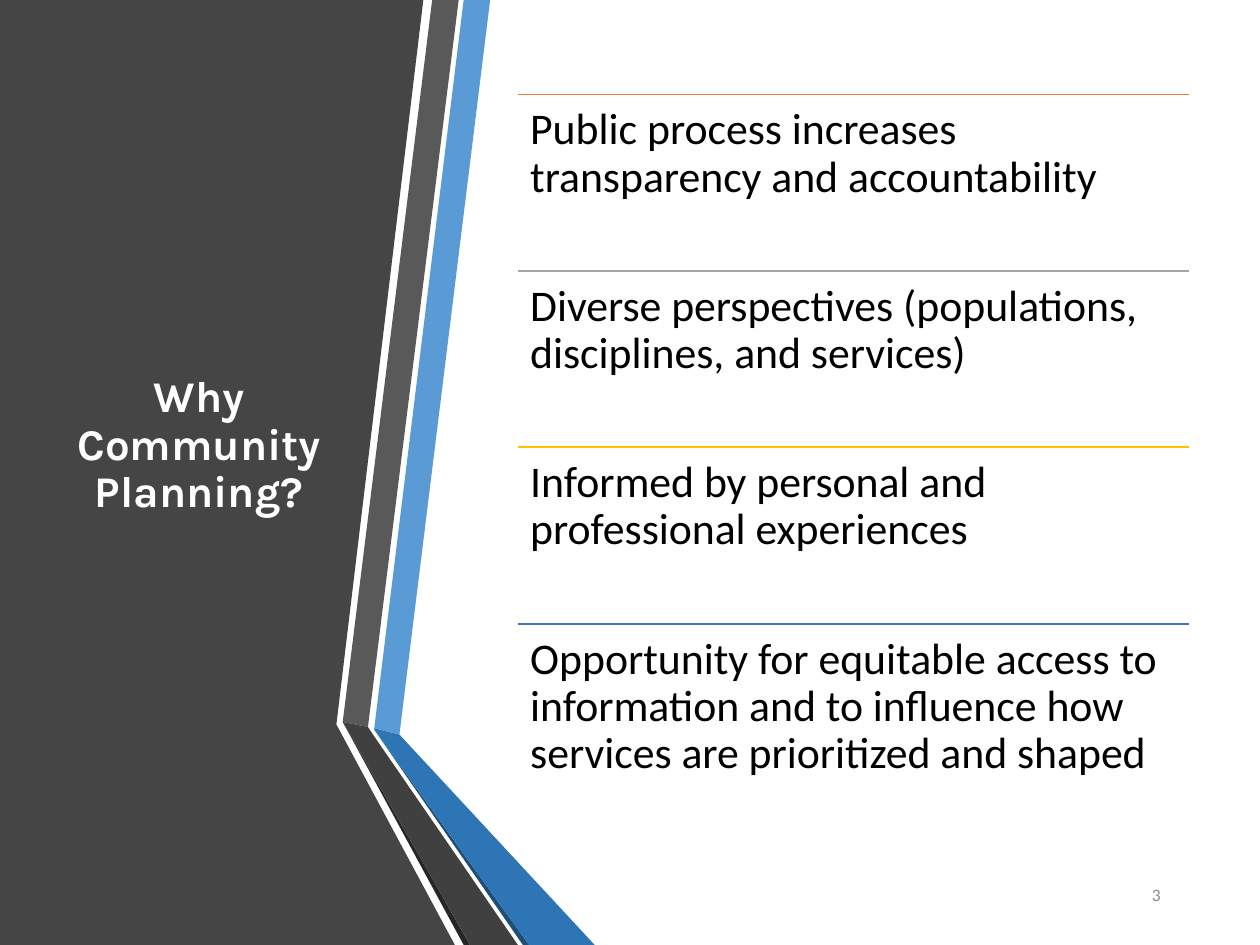
from lxml.etree import SubElement
from pptx import Presentation
from pptx.dml.color import RGBColor
from pptx.enum.shapes import MSO_CONNECTOR
from pptx.enum.text import MSO_ANCHOR, MSO_AUTO_SIZE, PP_ALIGN
from pptx.oxml.ns import qn
from pptx.util import Inches, Pt

COLORS = {
    "panel": "454545", "blue": "5B9BD5", "gray": "595959",
    "gray_edge": "262626", "blue_edge": "1F4E79",
    "blue_fold": "2E75B6", "gray_fold": "404040",
    "title": "FFFFFF", "body": "000000", "number": "8C8C8C",
    "orange": "ED7D31", "silver": "A5A5A5", "gold": "FFC000", "royal": "4472C4",
}
TITLE = "Why Community Planning?"
SLIDE_NUMBER = "3"
REASONS = [
    ("orange", "Public process increases transparency and accountability"),
    ("silver", "Diverse perspectives (populations, disciplines, and services)"),
    ("gold", "Informed by personal and professional experiences"),
    ("royal", "Opportunity for equitable access to information and to influence "
              "how services are prioritized and shaped"),
]
RIBBONS = [
    ("panel", [(0, 0), (3.36, 0), (2.67, 5.75), (3.61, 7.5), (0, 7.5)]),
    ("blue", [(2.97, 5.78), (3.17, 5.83), (3.89, 0), (3.68, 0)]),
    ("gray", [(3.64, 0), (3.43, 0), (2.72, 5.73), (2.92, 5.77)]),
    ("gray_edge", [(2.72, 5.73), (3.68, 7.5), (3.73, 7.5)]),
    ("blue_edge", [(2.97, 5.79), (4.15, 7.5), (4.2, 7.5)]),
    ("blue_fold", [(2.97, 5.79), (4.2, 7.5), (4.72, 7.5), (3.17, 5.83), (2.97, 5.78)]),
    ("gray_fold", [(4.11, 7.5), (2.96, 5.83), (2.92, 5.77), (2.72, 5.73), (3.73, 7.5)]),
]
LIST_LEFT, LIST_TOP, LIST_WIDTH, ROW_HEIGHT = 4.11, 0.75, 5.33, 1.4


def rgb(name):
    return RGBColor.from_string(COLORS[name])


def add_ribbon(slide, color, points):
    corners = [(Inches(x), Inches(y)) for x, y in points]
    builder = slide.shapes.build_freeform(*corners[0])
    builder.add_line_segments(corners[1:], close=True)
    ribbon = builder.convert_to_shape()
    ribbon.shadow.inherit = False
    ribbon.fill.solid()
    ribbon.fill.fore_color.rgb = rgb(color)
    ribbon.line.fill.background()


def add_rule(slide, color, top):
    rule = slide.shapes.add_connector(
        MSO_CONNECTOR.STRAIGHT, Inches(LIST_LEFT), Inches(top),
        Inches(LIST_LEFT + LIST_WIDTH), Inches(top))
    rule.line.color.rgb = rgb(color)
    rule.line.width = Pt(1)
    SubElement(rule._element.spPr, qn("a:effectLst"))


def write(shape, text, size, font, color, align, anchor, bold=False, spacing=None):
    frame = shape.text_frame
    frame.text = text
    frame.word_wrap = True
    frame.auto_size = MSO_AUTO_SIZE.NONE
    frame.vertical_anchor = anchor
    paragraph = frame.paragraphs[0]
    paragraph.alignment = align
    paragraph.line_spacing = spacing
    run_font = paragraph.runs[0].font
    run_font.size = Pt(size)
    run_font.name = font
    run_font.bold = bold
    run_font.color.rgb = rgb(color)
    return frame


def add_reason(slide, text, top):
    reason = slide.shapes.add_textbox(
        Inches(LIST_LEFT), Inches(top), Inches(LIST_WIDTH), Inches(ROW_HEIGHT))
    frame = write(reason, text, 25, "Calibri", "body",
                  PP_ALIGN.LEFT, MSO_ANCHOR.TOP, spacing=0.9)
    frame.margin_left = frame.margin_right = Inches(0.1)
    frame.margin_top = frame.margin_bottom = Inches(0.1)


def main():
    deck = Presentation()
    deck.slide_width, deck.slide_height = Inches(10), Inches(7.5)
    slide = deck.slides.add_slide(deck.slide_layouts[5])

    for color, points in RIBBONS:
        add_ribbon(slide, color, points)

    title = slide.shapes.title
    title.left, title.top = Inches(0.44), Inches(0.75)
    title.width, title.height = Inches(2.28), Inches(5.58)
    write(title, TITLE, 25, "Karla", "title",
          PP_ALIGN.CENTER, MSO_ANCHOR.MIDDLE, bold=True, spacing=0.9)
    slide.shapes._spTree.append(title._element)

    number = slide.shapes.add_textbox(
        Inches(8.42), Inches(6.9), Inches(0.89), Inches(0.4))
    frame = write(number, SLIDE_NUMBER, 10, "Calibri", "number",
                  PP_ALIGN.RIGHT, MSO_ANCHOR.MIDDLE)
    frame.paragraphs[0].space_after = Pt(6)

    for row, (color, text) in enumerate(REASONS):
        top = LIST_TOP + row * ROW_HEIGHT
        add_rule(slide, color, top)
        add_reason(slide, text, top)

    deck.save("out.pptx")


if __name__ == "__main__":
    main()
